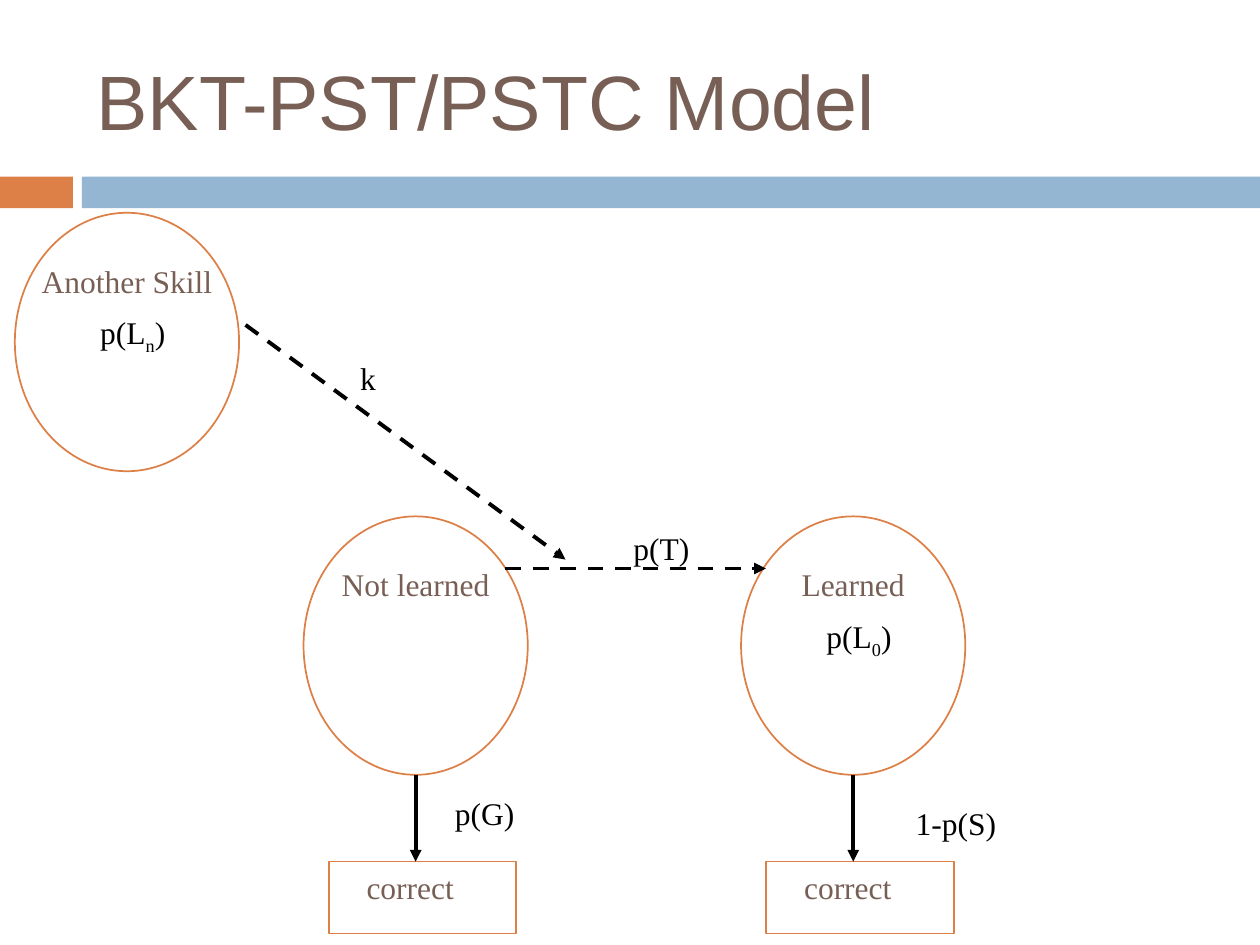
"""Builds the BKT-PST/PSTC model slide."""
from lxml import etree
from pptx import Presentation
from pptx import util as u
from pptx.dml.color import RGBColor
from pptx.enum import dml, shapes, text
from pptx.oxml.ns import qn

COLORS = {"brown": "775F55", "orange": "DD8047", "blue": "94B6D2", "black": "000000"}


class Deck:
    """Holds the style and the current slide."""

    def __init__(self, prs):
        self.font, self.size = "Times New Roman", 18
        self.slide = prs.slides.add_slide(prs.slide_layouts[6])

    def rgb(self, name):
        return RGBColor.from_string(COLORS[name])

    def format(self, r, color, size=None, font=None):
        r.font.name = font or self.font
        r.font.size = u.Pt(size or self.size)
        r.font.color.rgb = self.rgb(color)

    def shape(self, kind, x, y, w, h, fill=None):
        sp = self.slide.shapes.add_shape(kind, u.Cm(x), u.Cm(y), u.Cm(w), u.Cm(h))
        sp.shadow.inherit = False
        if fill:
            sp.fill.solid()
            sp.fill.fore_color.rgb = self.rgb(fill)
            sp.line.fill.background()
        else:
            sp.fill.background()
            sp.line.color.rgb = self.rgb("orange")
            sp.line.width = u.Pt(1)
        return sp

    def label(self, words, x, y, w=4, h=1.4, color="black", align=None, sub=None, **style):
        tf = self.slide.shapes.add_textbox(u.Cm(x), u.Cm(y), u.Cm(w), u.Cm(h)).text_frame
        tf.word_wrap = True
        tf.text = words
        p = tf.paragraphs[0]
        p.alignment = align
        if sub:
            r = p.add_run()
            r.text = sub
            r._r.get_or_add_rPr().set("baseline", "-25000")
            p.add_run().text = ")"
        for r in p.runs:
            self.format(r, color, **style)
        return tf

    def state(self, name, x, y, sub=None):
        self.shape(shapes.MSO_SHAPE.OVAL, x, y, 4.52, 5.21)
        self.label(name, x, y + 0.86, 4.52, color="brown", align=text.PP_ALIGN.CENTER)
        if sub:
            self.label("p(L", x + 1.47, y + 1.9, 3, sub=sub)

    def outcome(self, words, x, y):
        sp = self.shape(shapes.MSO_SHAPE.RECTANGLE, x, y, 3.78, 1.45)
        tf = sp.text_frame
        tf.text = words
        tf.vertical_anchor = text.MSO_ANCHOR.TOP
        tf.margin_left = u.Cm(0.76)
        p = tf.paragraphs[0]
        p.alignment = text.PP_ALIGN.LEFT
        self.format(p.runs[0], "brown")

    def arrow(self, x1, y1, x2, y2, dashed=False):
        c = self.slide.shapes.add_connector(
            shapes.MSO_CONNECTOR.STRAIGHT, u.Cm(x1), u.Cm(y1), u.Cm(x2), u.Cm(y2))
        c.line.color.rgb = self.rgb("black")
        c.line.width = u.Pt(2.25)
        if dashed:
            c.line.dash_style = dml.MSO_LINE.DASH
        etree.SubElement(c.line._get_or_add_ln(), qn("a:tailEnd"), type="triangle")
        etree.SubElement(c._element.spPr, qn("a:effectLst"))


def main():
    prs = Presentation()
    prs.slide_width, prs.slide_height = u.Cm(25.4), u.Cm(19.05)
    s = Deck(prs)
    for x, w, fill in ((0, 1.47, "orange"), (1.65, 23.75, "blue")):
        s.shape(shapes.MSO_SHAPE.RECTANGLE, x, 3.56, w, 0.64, fill)
    title = s.label("BKT-PST/PSTC Model", 1.7, 0.64, 22.66, 2.74, "brown", size=44, font="Arial")
    title.vertical_anchor = text.MSO_ANCHOR.MIDDLE

    s.state("Another Skill", 0.3, 4.29, "n")
    for name, x, sub in (("Not learned", 6.12, None), ("Learned", 14.94, "0")):
        s.state(name, x, 10.41, sub)
        s.outcome("correct", x + 0.51, 17.37)
        s.arrow(x + 2.26, 15.62, x + 2.26, 17.37)
    s.arrow(10.19, 11.46, 15.44, 11.46, dashed=True)
    s.arrow(4.95, 6.55, 11.4, 11.28, dashed=True)

    for words, x, y in (("k", 7.01, 7.11), ("p(T)", 12.52, 10.54),
                        ("p(G)", 8.92, 15.88), ("1-p(S)", 18.21, 16.08)):
        s.label(words, x, y)
    prs.save("out.pptx")


if __name__ == "__main__":
    main()
